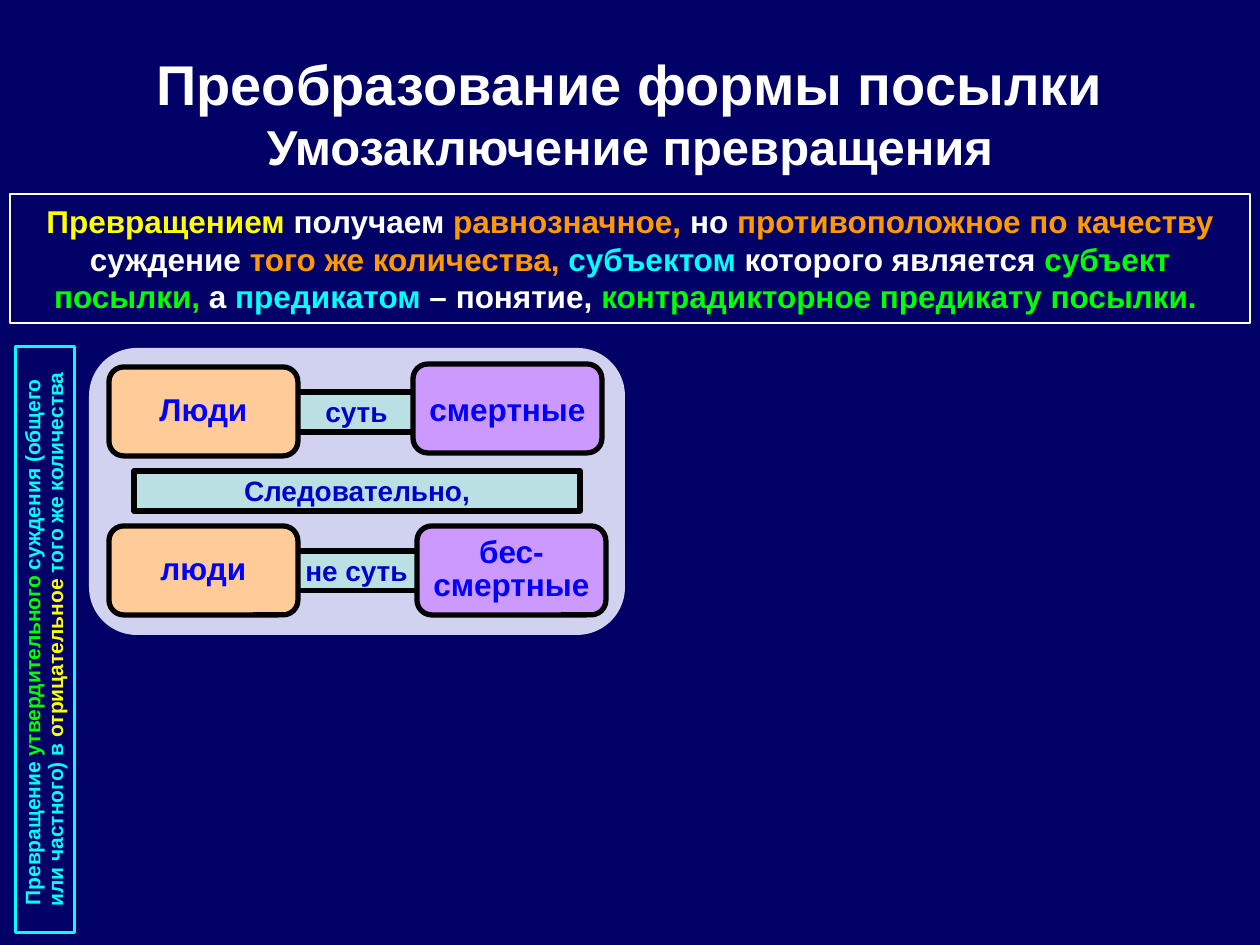
"""Build the slide on obversion of a premise."""
from dataclasses import dataclass
from typing import NamedTuple, Optional

from pptx import Presentation
from pptx.dml.color import RGBColor
from pptx.enum.shapes import MSO_SHAPE
from pptx.enum.text import MSO_ANCHOR, PP_ALIGN
from pptx.util import Emu, Pt

PX = 914400 / 126
FONT = "Arial"
COLORS = {
    "navy": "000066", "lavender": "D1D1F0", "teal": "BBE0E3", "peach": "FFCC99",
    "violet": "CC99FF", "black": "000000", "white": "FFFFFF", "blue": "0000FF",
    "deep": "0000CC", "yellow": "FFFF00", "orange": "FF9900", "cyan": "00FFFF",
    "green": "00FF00",
}


class Span(NamedTuple):
    text: str
    color: str
    size: int


@dataclass
class Box:
    at: tuple[int, int, int, int]
    spans: tuple[Span, ...] = ()
    shape: MSO_SHAPE = MSO_SHAPE.RECTANGLE
    fill: Optional[str] = None
    line: Optional[str] = None
    width: float = 3
    margins: tuple[int, int, int, int] = (13, 6, 13, 6)
    spacing: float = 1.0
    wrap: bool = True
    rotation: int = 0


def px(n: int) -> Emu:
    return Emu(round(n * PX))


def rgb(name: str) -> RGBColor:
    return RGBColor.from_string(COLORS[name])


def write(s, box: Box) -> None:
    tf = s.text_frame
    tf.word_wrap = box.wrap
    tf.vertical_anchor = MSO_ANCHOR.MIDDLE
    tf.margin_left, tf.margin_top, tf.margin_right, tf.margin_bottom = map(px, box.margins)
    p = tf.paragraphs[0]
    p.alignment = PP_ALIGN.CENTER
    p.line_spacing = box.spacing
    for span in box.spans:
        for i, text in enumerate(span.text.split("\n")):
            if i:
                p.add_line_break()
            if text:
                r = p.add_run()
                r.text = text
                r.font.name, r.font.size, r.font.bold = FONT, Pt(span.size), True
                r.font.color.rgb = rgb(span.color)


def draw(slide, box: Box) -> None:
    s = slide.shapes.add_shape(box.shape, *map(px, box.at))
    s.shadow.inherit = False
    s.rotation = box.rotation
    if box.fill:
        s.fill.solid()
        s.fill.fore_color.rgb = rgb(box.fill)
    else:
        s.fill.background()
    if box.line:
        s.line.color.rgb = rgb(box.line)
        s.line.width = Pt(box.width)
    else:
        s.line.fill.background()
    if box.spans:
        write(s, box)


def bar(text: str, left: int, top: int, width: int) -> Box:
    return Box((left, top, width, 40), (Span(text, "deep", 16),), fill="teal",
               line="black", margins=(13, 5, 13, 6), wrap=False)


def term(text: str, left: int, top: int, fill: str, spacing: float) -> Box:
    return Box((left, top, 189, 89), (Span(text, "blue", 18),), MSO_SHAPE.ROUNDED_RECTANGLE,
               fill, "black", spacing=spacing, wrap=False)


def spans(size: int, *parts: tuple[str, str]) -> tuple[Span, ...]:
    return tuple(Span(text, color, size) for text, color in parts)


TITLE = Box((63, 38, 1134, 149), (
    Span("Преобразование формы посылки\n", "white", 32),
    Span("Умозаключение превращения", "white", 28),
))

DEFINITION = spans(
    18,
    ("Превращением ", "yellow"), ("получаем ", "white"),
    ("равнозначное, ", "orange"), ("но ", "white"),
    ("противоположное по качеству ", "orange"), ("суждение ", "white"),
    ("того же количества, ", "orange"), ("субъектом", "cyan"),
    (" которого является ", "white"), ("субъект посылки,", "green"),
    (" а ", "white"), ("предикатом", "cyan"), (" – понятие, ", "white"),
    ("контрадикторное предикату посылки. ", "green"),
)

RULE = spans(
    12,
    ("Превращение ", "cyan"), ("утвердительного", "green"),
    (" суждения (общего \nили частного) в ", "cyan"),
    ("отрицательное", "yellow"), (" того же количества", "cyan"),
)

BOXES = [
    Box((89, 348, 536, 287), shape=MSO_SHAPE.ROUNDED_RECTANGLE, fill="lavender"),
    bar("суть", 282, 392, 149),
    bar("не суть", 282, 551, 149),
    term("люди", 109, 526, "peach", 0.9),
    term("бес-\nсмертные", 417, 526, "violet", 0.85),
    term("Люди", 109, 367, "peach", 0.9),
    term("смертные", 413, 364, "violet", 1.0),
    bar("Следовательно,", 134, 471, 446),
    Box((10, 194, 1240, 129), DEFINITION, line="white", width=1.25),
    Box((-248, 610, 586, 59), RULE, line="cyan", width=1.25,
        margins=(5, 6, 5, 6), spacing=0.9, rotation=270),
]


def main() -> None:
    prs = Presentation()
    prs.slide_width, prs.slide_height = px(1260), px(945)
    slide = prs.slides.add_slide(prs.slide_layouts[6])
    slide.background.fill.solid()
    slide.background.fill.fore_color.rgb = rgb("navy")
    write(slide.shapes.add_textbox(*map(px, TITLE.at)), TITLE)
    for box in BOXES:
        draw(slide, box)
    prs.save("out.pptx")


if __name__ == "__main__":
    main()
